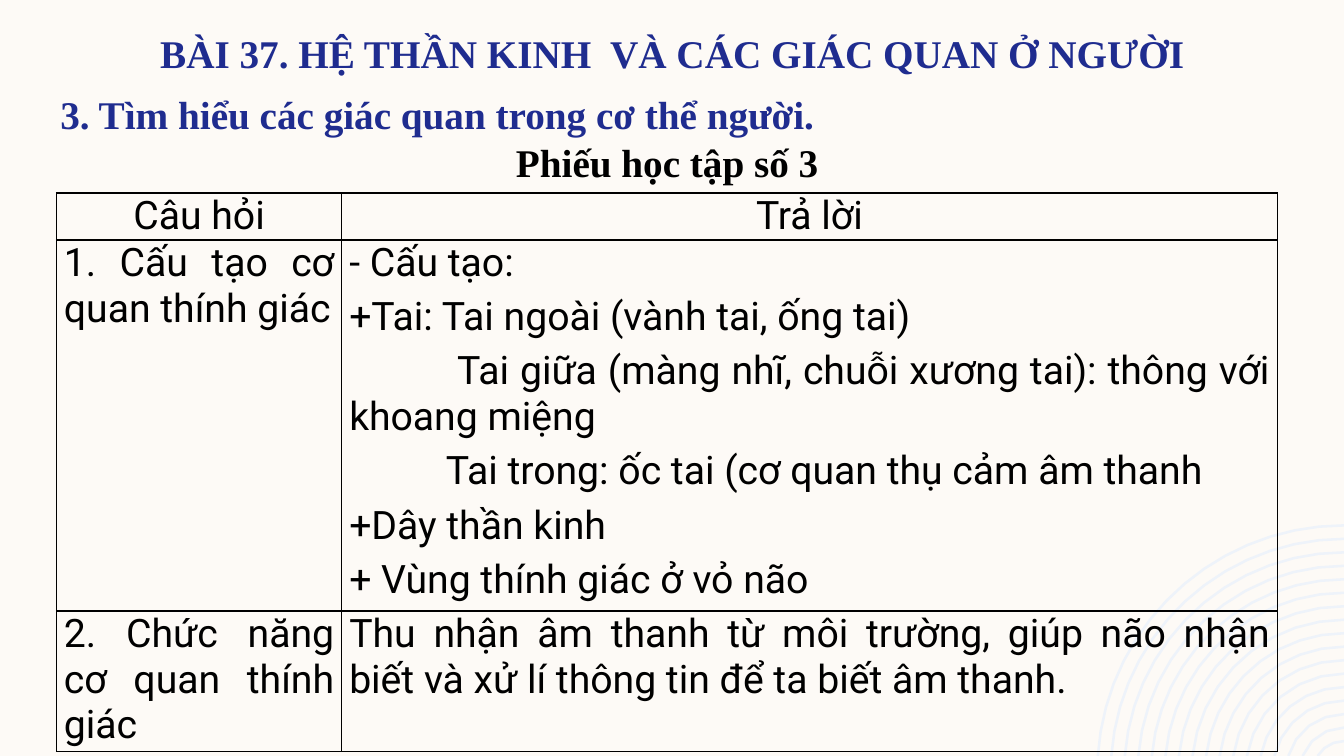
from math import asin, cos, pi, sin

from lxml.etree import SubElement
from pptx import Presentation
from pptx.dml.color import RGBColor
from pptx.enum.text import PP_ALIGN as Align
from pptx.oxml.ns import qn
from pptx.util import Pt

# Content
COLORS = {"background": "FDFAF6", "rings": "EEF3FA", "heading": "1F2C8F", "ink": "000000"}
SERIF, SANS, SIZE = "Times New Roman", "Roboto", 28
WIDTH, HEIGHT = 960, 540

# text, (left, top, width, height), alignment, colour, line spacing, top inset
HEADINGS = [
    ("BÀI 37. HỆ THẦN KINH  VÀ CÁC GIÁC QUAN Ở NGƯỜI",
     (0, 5.76, 960, 46.8), Align.CENTER, "heading", 48.8, 0),
    ("3. Tìm hiểu các giác quan trong cơ thể người.",
     (36, 48.96, 888, 46.8), Align.LEFT, "heading", 48.8, 0),
    ("Phiếu học tập số 3 ",
     (0, 95.04, 960, 41.04), Align.CENTER, "ink", None, 3.6),
]

# Each cell is a list of (text, first-line indent)
ROWS = [
    ([("Câu hỏi", 0)], [("Trả lời", 0)]),
    ([("1. Cấu tạo cơ quan thính giác", 0)],
     [("- Cấu tạo:", 0),
      ("+Tai: Tai ngoài (vành tai, ống tai)", 0),
      ("Tai giữa (màng nhĩ, chuỗi xương tai): thông với khoang miệng", 77),
      ("Tai trong: ốc tai (cơ quan thụ cảm âm thanh", 69),
      ("+Dây thần kinh", 0),
      ("+ Vùng thính giác ở vỏ não", 0)]),
    ([("2. Chức năng cơ quan thính giác", 0)],
     [("Thu nhận âm thanh từ môi trường, giúp não nhận biết và "
       "xử lí thông tin để ta biết âm thanh.", 0)]),
]
TABLE_LEFT, TABLE_TOP = 40.3, 137.9
COLUMN_WIDTHS = [203.8, 668.2]
ROW_HEIGHTS = [33.5, 265, 100.7]

# Concentric rings, cut off by the right and bottom slide edges
RING_COUNT, RING_STEP, RING_WIDTH = 17, 9.63, 1.8
RING_RADIUS, RING_CENTER_Y = 176.2, 551.5
CHORD = 20  # longest straight piece of a ring
UNITS = 100  # drawing units per point


def rgb(name):
    return RGBColor.from_string(COLORS[name])


def add_run(p, text, font, color, bold=False):
    r = p.add_run()
    r.text = text
    r.font.name, r.font.size, r.font.bold = font, Pt(SIZE), bold
    r.font.color.rgb = rgb(color)


def arc(radius):
    start = asin((RING_CENTER_Y - HEIGHT) / radius)
    sweep = pi / 2 - start
    steps = int(radius * sweep / CHORD) + 2
    angles = [start + sweep * i / steps for i in range(steps + 1)]
    return [((WIDTH - radius * cos(a)) * UNITS,
             (RING_CENTER_Y - radius * sin(a)) * UNITS) for a in angles]


def add_rings(shapes):
    builder = None
    for i in range(RING_COUNT):
        points = arc(RING_RADIUS - i * RING_STEP)
        if builder is None:
            builder = shapes.build_freeform(*points[0], scale=Pt(1) / UNITS)
        else:
            builder.move_to(*points[0])
        builder.add_line_segments(points[1:], close=False)
    rings = builder.convert_to_shape()
    rings.shadow.inherit = False
    rings.fill.background()
    rings.line.color.rgb = rgb("rings")
    rings.line.width = Pt(RING_WIDTH)


def add_heading(shapes, text, box, align, color, spacing, inset_top):
    tf = shapes.add_textbox(*map(Pt, box)).text_frame
    tf.word_wrap = True
    tf.margin_top = Pt(inset_top)
    p = tf.paragraphs[0]
    p.alignment = align
    if spacing:
        p.line_spacing = Pt(spacing)
    add_run(p, text, SERIF, color, bold=True)


def add_borders(cell):
    tc_pr = cell._tc.get_or_add_tcPr()
    for side in ("a:lnL", "a:lnR", "a:lnT", "a:lnB"):
        ln = SubElement(tc_pr, qn(side), w=str(Pt(1)))
        fill = SubElement(ln, qn("a:solidFill"))
        SubElement(fill, qn("a:srgbClr"), val=COLORS["ink"])


def fill_cell(cell, lines, align):
    cell.margin_left = cell.margin_right = Pt(5.4)
    cell.margin_top = cell.margin_bottom = 0
    add_borders(cell)
    cell.fill.background()
    tf = cell.text_frame
    for i, (text, indent) in enumerate(lines):
        p = tf.add_paragraph() if i else tf.paragraphs[0]
        p.alignment = align
        p.space_before = p.space_after = Pt(3)
        if indent:
            p_pr = p._p.get_or_add_pPr()
            p_pr.set("marL", "0")
            p_pr.set("indent", str(Pt(indent)))
        add_run(p, text, SANS, "ink")


def add_worksheet(shapes):
    frame = shapes.add_table(len(ROWS), len(COLUMN_WIDTHS), Pt(TABLE_LEFT), Pt(TABLE_TOP),
                             Pt(sum(COLUMN_WIDTHS)), Pt(sum(ROW_HEIGHTS)))
    table = frame.table
    table.first_row = table.horz_banding = False
    for column, width in zip(table.columns, COLUMN_WIDTHS):
        column.width = Pt(width)
    for i, (row, height) in enumerate(zip(ROWS, ROW_HEIGHTS)):
        table.rows[i].height = Pt(height)
        for j, lines in enumerate(row):
            fill_cell(table.cell(i, j), lines, Align.JUSTIFY if i else Align.CENTER)


def main():
    prs = Presentation()
    prs.slide_width, prs.slide_height = Pt(WIDTH), Pt(HEIGHT)
    s = prs.slides.add_slide(prs.slide_layouts[6])
    s.background.fill.solid()
    s.background.fill.fore_color.rgb = rgb("background")

    # Decoration, then table, then headings
    add_rings(s.shapes)
    add_worksheet(s.shapes)
    for heading in HEADINGS:
        add_heading(s.shapes, *heading)

    prs.save("out.pptx")


if __name__ == "__main__":
    main()
